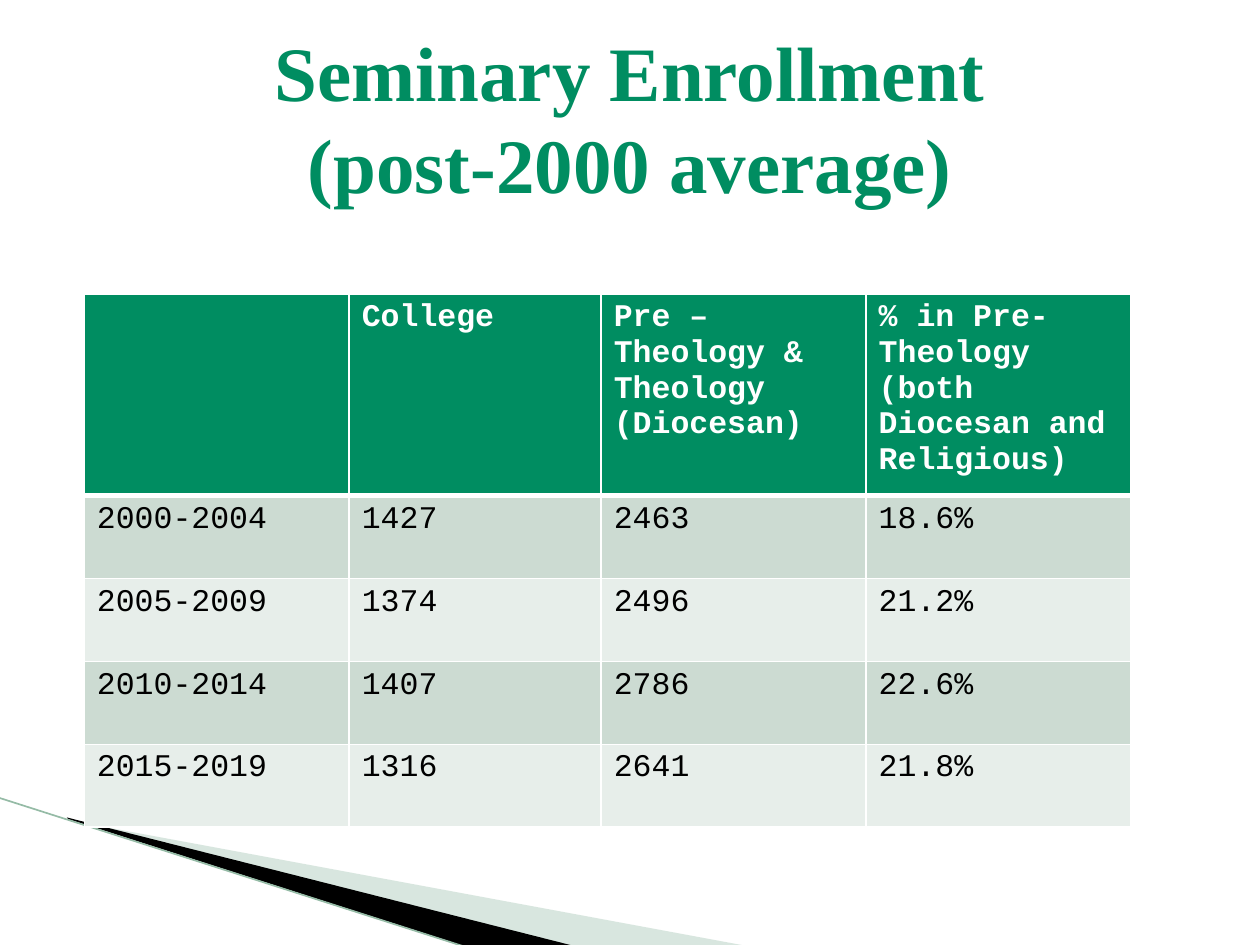
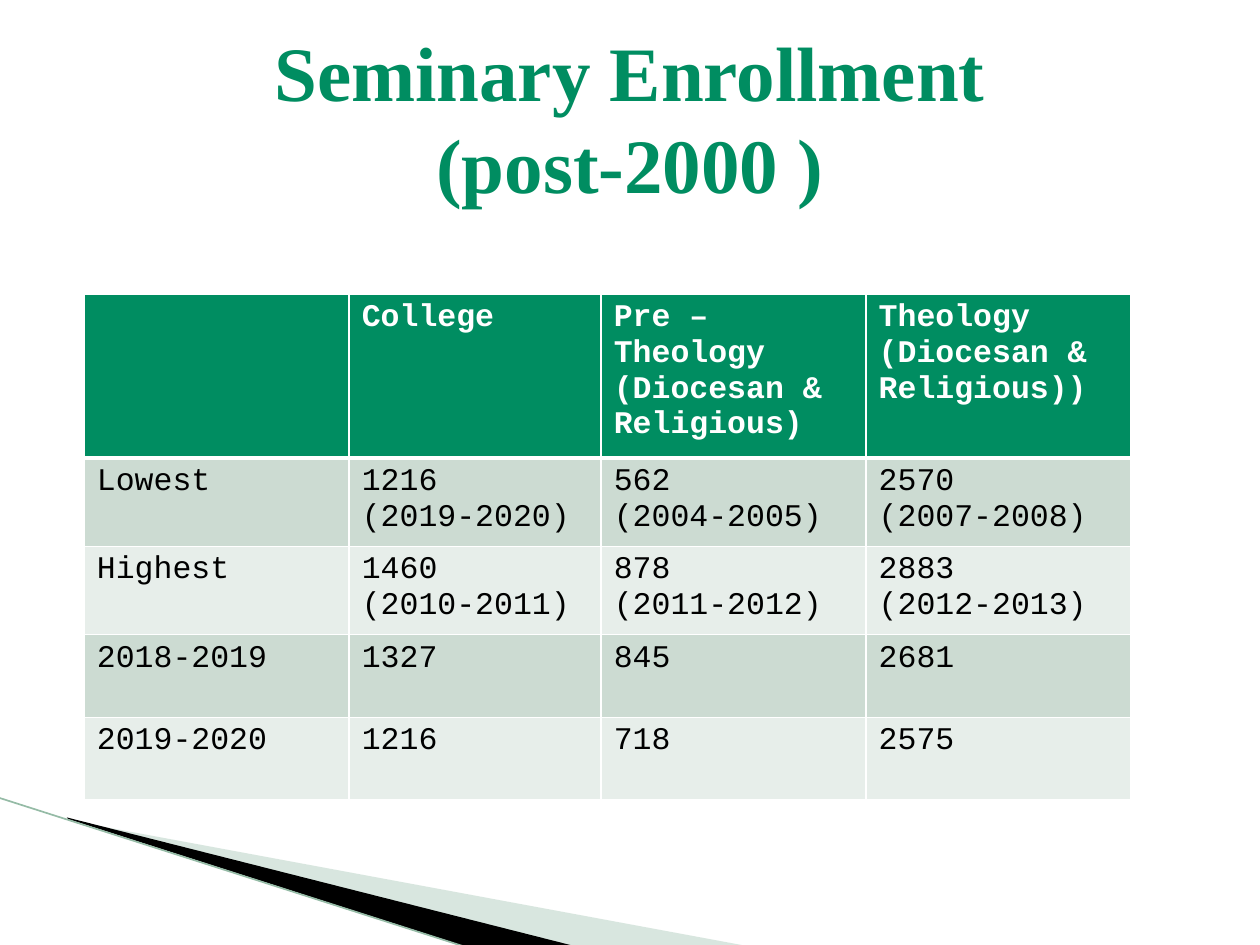
from dataclasses import dataclass

from lxml import etree
from pptx import Presentation
from pptx import util as u
from pptx.dml.color import RGBColor
from pptx.enum import shapes, text
from pptx.oxml.ns import qn
from pptx.slide import Slide
from pptx.table import _Cell
from pptx.text.text import _Paragraph

Cm, Pt = u.Cm, u.Pt


@dataclass(frozen=True)
class Theme:
    green: str = "008D61"
    pale_green: str = "9FC2AF"
    rule: str = "95BBA6"
    bands: tuple[str, str] = ("CCDBD2", "E7EEEA")
    white: str = "FFFFFF"
    black: str = "000000"
    title_font: str = "Times New Roman"
    table_font: str = "Courier New"
    title_size: int = 44
    table_size: int = 18
    thin: int = 1
    thick: int = 3


@dataclass(frozen=True)
class Wedge:
    points: tuple[tuple[float, float], ...]
    color: str
    opacity: int = 100


@dataclass(frozen=True)
class EnrollmentPage:
    title: tuple[str, str]
    rows: tuple[tuple[str, ...], ...]


THEME = Theme()
COLUMN_WIDTHS = (5.34, 5.08, 5.34, 5.34)
HEADER_HEIGHT, ROW_HEIGHT = 3.25, 1.67

WEDGES = (
    Wedge(((1.4, 16.54), (15.11, 19.08), (11.58, 19.08), (1.4, 16.51)),
          THEME.pale_green, 40),
    Wedge(((1.35, 16.48), (11.61, 19.08), (9.45, 19.1), (1.37, 16.51)),
          THEME.black),
)

# A line break inside a cell starts a new paragraph
PAGES = (
    EnrollmentPage(
        ("Seminary Enrollment", "(post-2000 average)"),
        (("", "College", "Pre – Theology & Theology (Diocesan)",
          "% in Pre-Theology (both Diocesan and Religious)"),
         ("2000-2004", "1427", "2463", "18.6%"),
         ("2005-2009", "1374", "2496", "21.2%"),
         ("2010-2014", "1407", "2786", "22.6%"),
         ("2015-2019", "1316", "2641", "21.8%")),
    ),
    EnrollmentPage(
        ("Seminary Enrollment", "(post-2000 )"),
        (("", "College", "Pre – Theology (Diocesan & Religious)",
          "Theology (Diocesan &\nReligious))"),
         ("Lowest", "1216\n(2019-2020)", "562\n(2004-2005)", "2570\n(2007-2008)"),
         ("Highest", "1460\n(2010-2011)", "878\n(2011-2012)", "2883\n(2012-2013)"),
         ("2018-2019", "1327", "845", "2681"),
         ("2019-2020", "1216", "718", "2575")),
    ),
)


def rgb(color: str) -> RGBColor:
    return RGBColor.from_string(color)


def add_span(para: _Paragraph, words: str, font: str, size: int,
             color: str, bold: bool) -> None:
    span = para.add_run()
    span.text = words
    span.font.name = font
    span.font.size = Pt(size)
    span.font.bold = bold
    span.font.color.rgb = rgb(color)


# Corner decoration
def draw_wedge(page: Slide, wedge: Wedge) -> None:
    start, *others = [(Cm(x), Cm(y)) for x, y in wedge.points]
    builder = page.shapes.build_freeform(*start)
    builder.add_line_segments(others, close=True)
    shape = builder.convert_to_shape()
    shape.shadow.inherit = False
    shape.line.fill.background()
    shape.fill.solid()
    shape.fill.fore_color.rgb = rgb(wedge.color)
    if wedge.opacity < 100:
        tint = shape._element.spPr.find(".//" + qn("a:srgbClr"))
        etree.SubElement(tint, qn("a:alpha"), val=str(wedge.opacity * 1000))


def draw_corner(page: Slide) -> None:
    for wedge in WEDGES:
        draw_wedge(page, wedge)
    rule = page.shapes.add_connector(
        shapes.MSO_CONNECTOR.STRAIGHT, Cm(-0.03), Cm(16.08), Cm(9.42), Cm(19.1))
    rule.line.color.rgb = rgb(THEME.rule)
    rule.line.width = Pt(0.95)
    etree.SubElement(rule._element.spPr, qn("a:effectLst"))


# Title
def draw_title(page: Slide, lines: tuple[str, str]) -> None:
    box = page.shapes.add_textbox(Cm(1.27), Cm(0.76), Cm(22.86), Cm(3.18))
    frame = box.text_frame
    frame.word_wrap = True
    frame.vertical_anchor = text.MSO_ANCHOR.MIDDLE
    para = frame.paragraphs[0]
    para.alignment = text.PP_ALIGN.CENTER
    for index, line in enumerate(lines):
        if index:
            para.add_line_break()
        add_span(para, line, THEME.title_font, THEME.title_size, THEME.green, True)


# Table
def set_borders(cell: _Cell, top: int, bottom: int) -> None:
    properties = cell._tc.get_or_add_tcPr()
    widths = {"lnL": THEME.thin, "lnR": THEME.thin, "lnT": top, "lnB": bottom}
    for position, (side, width) in enumerate(widths.items()):
        border = etree.Element(qn(f"a:{side}"), w=str(Pt(width)))
        fill = etree.SubElement(border, qn("a:solidFill"))
        etree.SubElement(fill, qn("a:srgbClr"), val=THEME.white)
        properties.insert(position, border)


def fill_cell(cell: _Cell, words: str, row: int) -> None:
    header = row == 0
    cell.fill.solid()
    cell.fill.fore_color.rgb = rgb(THEME.green if header else THEME.bands[(row - 1) % 2])
    set_borders(cell, THEME.thick if row == 1 else THEME.thin,
                THEME.thick if header else THEME.thin)
    if not words:
        return
    frame = cell.text_frame
    for index, line in enumerate(words.split("\n")):
        para = frame.add_paragraph() if index else frame.paragraphs[0]
        add_span(para, line, THEME.table_font, THEME.table_size,
                 THEME.white if header else THEME.black, header)


def draw_table(page: Slide, rows: tuple[tuple[str, ...], ...]) -> None:
    heights = [HEADER_HEIGHT] + [ROW_HEIGHT] * (len(rows) - 1)
    table = page.shapes.add_table(
        len(rows), len(COLUMN_WIDTHS), Cm(1.7), Cm(5.93),
        Cm(sum(COLUMN_WIDTHS)), Cm(sum(heights))).table
    for column, width in zip(table.columns, COLUMN_WIDTHS):
        column.width = Cm(width)
    for row, (height, entries) in enumerate(zip(heights, rows)):
        table.rows[row].height = Cm(height)
        for column, words in enumerate(entries):
            fill_cell(table.cell(row, column), words, row)


def main() -> None:
    deck = Presentation()
    deck.slide_width, deck.slide_height = Cm(25.4), Cm(19.05)
    for content in PAGES:
        page = deck.slides.add_slide(deck.slide_layouts[6])
        draw_corner(page)
        draw_title(page, content.title)
        draw_table(page, content.rows)
    deck.save("out.pptx")


if __name__ == "__main__":
    main()
